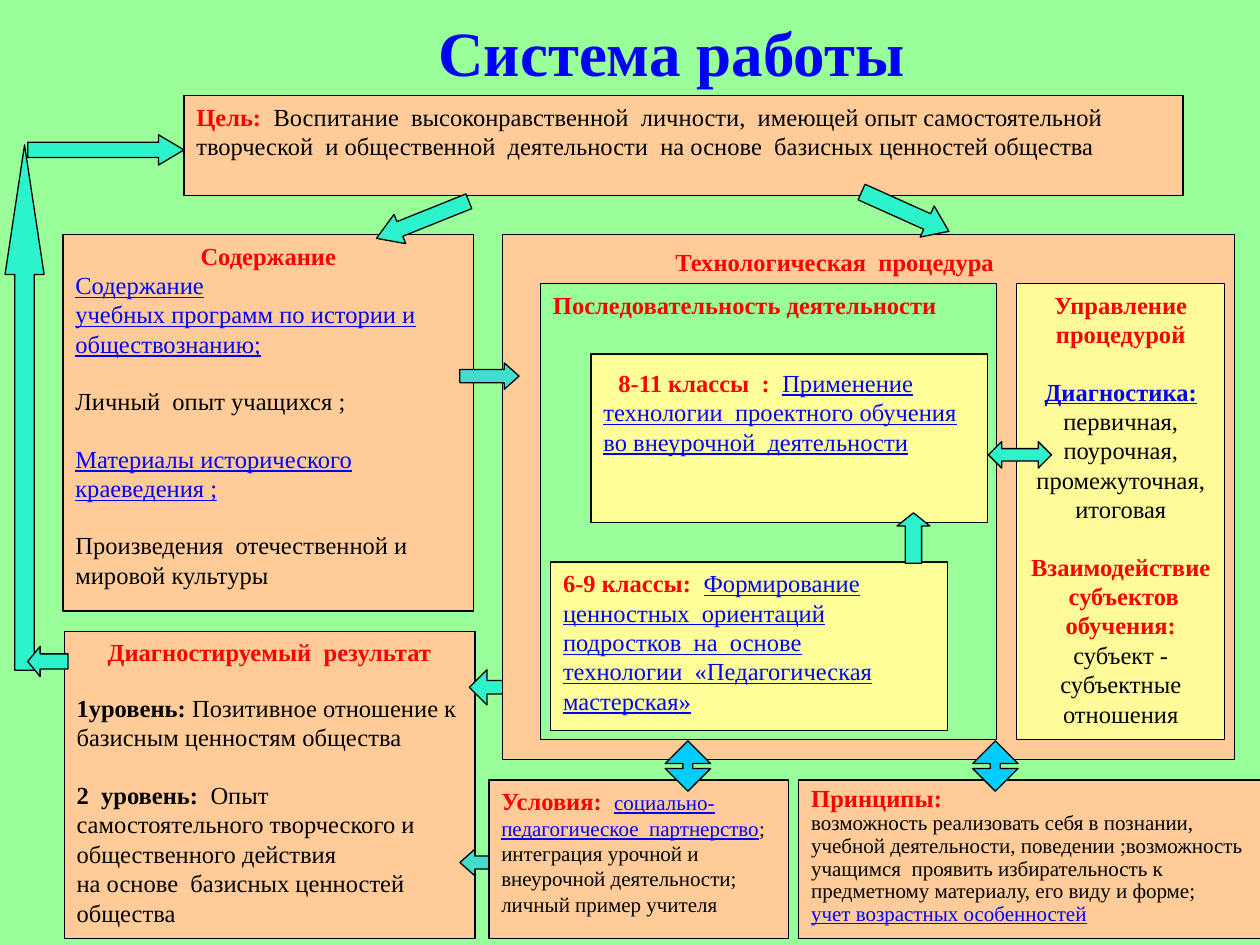
from lxml import etree
from pptx import Presentation
from pptx.dml.color import RGBColor
from pptx.enum import shapes, text
from pptx.oxml.ns import qn
from pptx.util import Inches, Pt

GREEN = RGBColor(0x99, 0xFF, 0x99)
PEACH = RGBColor(0xFF, 0xCC, 0x99)
YELLOW = RGBColor(0xFF, 0xFF, 0x99)
TURQUOISE = RGBColor(0x2D, 0xF3, 0xCD)
TEAL = RGBColor(0x43, 0xDD, 0xCE)
SKY = RGBColor(0x00, 0xCC, 0xFF)
RED = RGBColor(0xFF, 0x00, 0x00)
BLUE = RGBColor(0x00, 0x00, 0xFF)
BLACK = RGBColor(0x00, 0x00, 0x00)
FONT = "Times New Roman"

# Run styles: colour, bold, underlined
HEADING = (RED, True, False)
LINK = (BLUE, False, True)
BOLD_LINK = (BLUE, True, True)
PLAIN = (BLACK, False, False)
BOLD = (BLACK, True, False)

LEFT, CENTER = text.PP_ALIGN.LEFT, text.PP_ALIGN.CENTER
ARROW = shapes.MSO_SHAPE
GAP = 16  # one line of 14 pt text

presentation = Presentation()
presentation.slide_width, presentation.slide_height = Inches(10), Inches(7.5)
slide = presentation.slides.add_slide(presentation.slide_layouts[5])
slide.background.fill.solid()
slide.background.fill.fore_color.rgb = GREEN


def add_outlined(kind, frame, fill):
    shape = slide.shapes.add_shape(kind, *map(Inches, frame))
    shape.shadow.inherit = False
    shape.fill.solid()
    shape.fill.fore_color.rgb = fill
    shape.line.color.rgb = BLACK
    shape.line.width = Pt(0.75)
    return shape


def add_box(frame, fill, paragraphs, align=LEFT):
    """Each paragraph is (space before, size, runs); a newline in a run is a line break."""
    shape = add_outlined(shapes.MSO_SHAPE.RECTANGLE, frame, fill)
    text_frame = shape.text_frame
    text_frame.word_wrap = True
    text_frame.vertical_anchor = text.MSO_ANCHOR.TOP
    for index, (space, size, runs) in enumerate(paragraphs):
        paragraph = text_frame.add_paragraph() if index else text_frame.paragraphs[0]
        paragraph.alignment = align
        paragraph.space_before = Pt(space)
        paragraph.font.name = FONT
        paragraph.font.size = Pt(size)
        for words, (color, bold, underline) in runs:
            for number, line in enumerate(words.split("\n")):
                if number:
                    paragraph.add_line_break()
                run = paragraph.add_run()
                run.text = line
                run.font.color.rgb = color
                run.font.bold = bold
                run.font.underline = underline
    return shape


# Title
title = slide.shapes.title
title.left, title.top, title.width, title.height = map(Inches, (2.4, 0.05, 5.12, 0.71))
title.text_frame.margin_left = Inches(1.08)
title.text_frame.vertical_anchor = text.MSO_ANCHOR.MIDDLE
title.text_frame.text = "Система работы"
paragraph = title.text_frame.paragraphs[0]
paragraph.alignment = LEFT
paragraph.font.name, paragraph.font.size, paragraph.font.bold = FONT, Pt(36), True
paragraph.font.color.rgb = BLUE

# Arrows partly hidden by the procedure and conditions boxes
back_arrows = [
    (ARROW.RIGHT_ARROW, (3.65, 6.74, 0.47, 0.21), 180, 0.56, TEAL),
    (ARROW.UP_DOWN_ARROW, (3.85, 5.19, 0.28, 0.53), 90, 0.38, TURQUOISE),
]
front_arrows = [
    (ARROW.RIGHT_ARROW, (3.65, 2.88, 0.47, 0.21), 0, 0.56, TEAL),
    (ARROW.UP_DOWN_ARROW, (7.99, 3.36, 0.21, 0.5), 90, 0.47, TURQUOISE),
    (ARROW.RIGHT_ARROW, (7.05, 4.14, 0.4, 0.26), 270, 0.4, TURQUOISE),
    (ARROW.UP_DOWN_ARROW, (5.28, 5.88, 0.36, 0.4), 0, 0.22, SKY),
    (ARROW.UP_DOWN_ARROW, (7.72, 5.88, 0.36, 0.4), 0, 0.22, SKY),
    (ARROW.RIGHT_ARROW, (0.22, 1.07, 1.24, 0.24), 0, 0.84, TURQUOISE),
    (ARROW.UP_ARROW, (0.04, 1.15, 0.31, 4.17), 0, 3.32, TURQUOISE),
    (ARROW.LEFT_ARROW, (0.22, 5.13, 0.32, 0.24), 0, 0.41, TURQUOISE),
    (ARROW.DOWN_ARROW, (3.23, 1.35, 0.25, 0.79), 68.1, 0.8, TURQUOISE),
    (ARROW.DOWN_ARROW, (7.05, 1.3, 0.27, 0.76), 294.2, 0.7, TURQUOISE),
]

# Goal
add_box((1.46, 0.76, 7.93, 0.79), PEACH, [
    (0, 14, [("Цель:  ", HEADING),
             ("Воспитание  высоконравственной  личности,  имеющей опыт самостоятельной\n"
              "творческой  и общественной  деятельности  на основе  базисных ценностей общества",
              PLAIN)]),
])

# Content and result
content = add_box((0.5, 1.86, 3.26, 2.99), PEACH, [
    (0, 14, [("Содержание", HEADING)]),
    (0, 14, [("Содержание", LINK)]),
    (0, 14, [("учебных программ по истории и обществознанию;", LINK)]),
    (GAP, 14, [("Личный  опыт учащихся ;", PLAIN)]),
    (GAP, 14, [("Материалы исторического краеведения ;", LINK)]),
    (GAP, 14, [("Произведения  отечественной и мировой культуры", PLAIN)]),
])
result = add_box((0.51, 5.01, 3.26, 2.44), PEACH, [
    (0, 14, [("Диагностируемый  результат", HEADING)]),
    (15, 14, [("1уровень:", BOLD),
              (" Позитивное отношение к базисным ценностям общества", PLAIN)]),
    (GAP, 14, [("2  уровень:", BOLD),
               ("  Опыт\nсамостоятельного творческого и общественного действия", PLAIN)]),
    (0, 14, [("на основе  базисных ценностей общества", PLAIN)]),
])
for box in (content, result):
    box.text_frame.paragraphs[0].alignment = CENTER

for arrows in (back_arrows, front_arrows):
    if arrows is front_arrows:
        # Procedure, with its control and sequence panels
        procedure = add_box((3.99, 1.86, 5.81, 4.17), PEACH, [
            (0, 14, [("Технологическая  процедура", HEADING)]),
        ])
        procedure.text_frame.margin_left = Inches(1.37)
        procedure.text_frame.margin_top = Inches(0.1)

        control = add_box((8.07, 2.25, 1.65, 3.62), YELLOW, [
            (0, 14, [("Управление процедурой", HEADING)]),
            (GAP, 14, [("Диагностика:", BOLD_LINK)]),
            (0, 14, [("первичная,", PLAIN)]),
            (0, 14, [("поурочная, промежуточная,", PLAIN)]),
            (0, 14, [("итоговая", PLAIN)]),
            (GAP, 14, [("Взаимодействие  субъектов обучения:", HEADING)]),
            (0, 14, [("субъект - субъектные отношения", PLAIN)]),
        ], CENTER)
        color = control._element.spPr.find(qn("a:solidFill"))[0]
        etree.SubElement(color, qn("a:alpha")).set("val", "92000")

        add_box((4.29, 2.25, 3.62, 3.62), GREEN, [
            (0, 14, [("Последовательность деятельности", HEADING)]),
        ])
        add_box((4.37, 4.46, 3.15, 1.34), YELLOW, [
            (0, 14, [("6-9 классы:  ", HEADING),
                     ("Формирование\nценностных  ориентаций\nподростков  на  основе\n"
                      "технологии  «Педагогическая мастерская»", LINK)]),
        ])
        senior = add_box((4.69, 2.81, 3.15, 1.34), YELLOW, [
            (0, 14, [("8-11 классы  :  ", HEADING),
                     ("Применение\nтехнологии  проектного обучения\n"
                      "во внеурочной  деятельности", LINK)]),
        ])
        senior.text_frame.margin_top = Inches(0.11)
        first_line = senior.text_frame.paragraphs[0]._p.get_or_add_pPr()
        first_line.set("indent", str(Inches(0.12)))

        # Conditions and principles
        conditions = add_box((3.88, 6.19, 2.38, 1.26), PEACH, [
            (0, 12, [("Условия:  ", HEADING),
                     ("социально-педагогическое  партнерство", LINK),
                     ("; интеграция урочной и внеурочной деятельности;\n"
                      "личный пример учителя", PLAIN)]),
        ])
        conditions.text_frame.paragraphs[0].runs[0].font.size = Pt(14)
        principles = add_box((6.34, 6.19, 3.67, 1.26), PEACH, [
            (0, 14, [("Принципы:", HEADING)]),
            (0, 12, [("возможность реализовать себя в познании, учебной деятельности, "
                      "поведении ;возможность учащимся  проявить избирательность к "
                      "предметному материалу, его виду и форме;", PLAIN)]),
            (0, 12, [("учет возрастных особенностей", LINK)]),
        ])
        for paragraph in principles.text_frame.paragraphs:
            paragraph.line_spacing = 0.9

    for kind, frame, rotation, head, fill in arrows:
        arrow = add_outlined(kind, frame, fill)
        arrow.rotation = rotation
        arrow.adjustments[0] = 0.5
        arrow.adjustments[1] = head

presentation.save("out.pptx")
